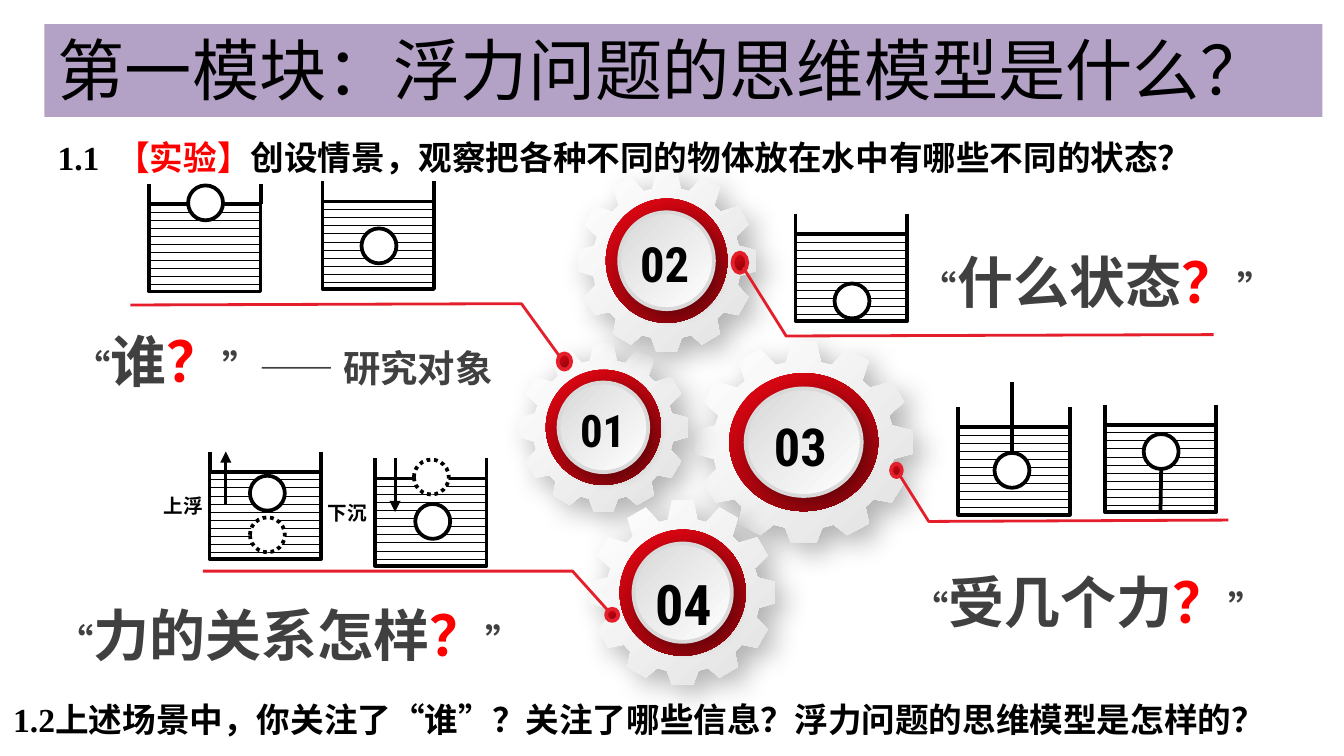
import math

from lxml import etree
from pptx import Presentation
from pptx import util as u
from pptx.dml.color import RGBColor
from pptx.enum import dml, shapes, text
from pptx.oxml.ns import qn

BLACK = RGBColor(0x00, 0x00, 0x00)
WHITE = RGBColor(0xFF, 0xFF, 0xFF)
SILVER = RGBColor(0xE2, 0xE2, 0xE2)
GREY = RGBColor(0xD9, 0xD9, 0xD9)
DARK = RGBColor(0x40, 0x40, 0x40)
RED = RGBColor(0xFF, 0x00, 0x00)
CRIMSON = RGBColor(0xE3, 0x06, 0x13)
MAROON = RGBColor(0x81, 0x04, 0x0B)
POINTER = RGBColor(0xE4, 0x1F, 0x2B)
PURPLE = RGBColor(0xB3, 0xA1, 0xC6)

SERIF, QUOTE, LABEL = "Times New Roman", "Quicksand", "Roboto Condensed"
CJK, TITLE = "Noto Sans CJK SC", "Noto Sans CJK JP"
EAST_ASIAN = {SERIF: CJK, LABEL: CJK, CJK: CJK, TITLE: TITLE}
OVAL, RECT = shapes.MSO_SHAPE.OVAL, shapes.MSO_SHAPE.RECTANGLE
JUSTIFY, CENTER = text.PP_ALIGN.JUSTIFY, text.PP_ALIGN.CENTER

TANK_W, TANK_H, WALL, BALL = 0.83, 0.65, 0.15, 0.26


class Board:
    def __init__(self, slide):
        self.s = slide

    def outline(self, sp, color=None, width=2, dashed=False):
        if color is None:
            sp.line.fill.background()
            return
        sp.line.color.rgb = color
        sp.line.width = u.Pt(width)
        if dashed:
            sp.line.dash_style = dml.MSO_LINE.ROUND_DOT

    def gradient(self, sp, first, last, angle):
        sp.fill.gradient()
        sp.fill.gradient_angle = 360 - angle
        for stop, color in zip(sp.fill.gradient_stops, (first, last)):
            stop.color.rgb = color

    def cast_shadow(self, sp, blur, dist):
        effects = sp._element.spPr.find(qn("a:effectLst"))
        shadow = etree.SubElement(
            effects, qn("a:outerShdw"), blurRad=str(u.Pt(blur)),
            dist=str(u.Pt(dist)), dir="2700000", algn="tl", rotWithShape="0")
        color = etree.SubElement(shadow, qn("a:srgbClr"), val="000000")
        etree.SubElement(color, qn("a:alpha"), val="30000")

    def shape(self, kind, x, y, w, h):
        sp = self.s.shapes.add_shape(kind, *map(u.Inches, (x, y, w, h)))
        sp.shadow.inherit = False
        return sp

    def freeform(self, points, close):
        pts = [(u.Inches(x), u.Inches(y)) for x, y in points]
        fb = self.s.shapes.build_freeform(*pts[0])
        fb.add_line_segments(pts[1:], close=close)
        sp = fb.convert_to_shape()
        sp.shadow.inherit = False
        return sp

    def line(self, x1, y1, x2, y2, width=2, arrow=None):
        """Draw a straight line; arrow is None, "headEnd" or "tailEnd"."""
        c = self.s.shapes.add_connector(
            shapes.MSO_CONNECTOR.STRAIGHT, *map(u.Inches, (x1, y1, x2, y2)))
        self.outline(c, BLACK, width)
        spPr = c._element.spPr
        if arrow:
            etree.SubElement(spPr.find(qn("a:ln")), qn("a:" + arrow), type="triangle")
        etree.SubElement(spPr, qn("a:effectLst"))
        return c

    def runs(self, p, runs):
        for words, size, font, color, bold in runs:
            r = p.add_run()
            r.text = words
            r.font.size = u.Pt(size)
            r.font.name = font
            r.font.bold = bold
            r.font.color.rgb = color
            if font in EAST_ASIAN:
                r.font._element.find(qn("a:latin")).addnext(
                    etree.Element(qn("a:ea"), typeface=EAST_ASIAN[font]))

    def text(self, x, y, w, h, runs, align=None, grow=True):
        tf = self.s.shapes.add_textbox(*map(u.Inches, (x, y, w, h))).text_frame
        tf.word_wrap = grow
        if grow:
            tf.auto_size = text.MSO_AUTO_SIZE.SHAPE_TO_FIT_TEXT
        p = tf.paragraphs[0]
        p.alignment = align
        self.runs(p, runs)
        return p

    def title(self, x, y, w, h, words):
        sp = self.s.shapes.title
        sp.left, sp.top, sp.width, sp.height = map(u.Inches, (x, y, w, h))
        tf = sp.text_frame
        tf.auto_size = text.MSO_AUTO_SIZE.NONE
        tf.vertical_anchor = text.MSO_ANCHOR.MIDDLE
        tf.paragraphs[0].alignment = JUSTIFY
        self.runs(tf.paragraphs[0], [(words, 36, TITLE, BLACK, False)])
        self.s.shapes._spTree.append(sp._element)  # in front of its band

    def gear(self, cx, cy, w, h, label, size, label_box):
        """Twelve-toothed wheel with a red ring and a numbered hub."""
        points = []
        for tooth in range(12):
            for offset, tip in ((-11.5, False), (-6.6, True), (6.6, True), (11.5, False)):
                a = math.radians(30 * tooth + offset - 90)
                radius = 1 if tip else 0.83 + 0.03 * math.sin(a)
                points.append((cx + w / 2 * radius * math.cos(a),
                               cy + h / 2 * radius * math.sin(a)))
        wheel = self.freeform(points, close=True)
        self.gradient(wheel, WHITE, SILVER, 45)
        self.outline(wheel)
        self.cast_shadow(wheel, 15, 7)
        ring, hub = [self.shape(OVAL, cx - w * k / 2, cy - h * k / 2, w * k, h * k)
                     for k in (0.68, 0.53)]
        self.gradient(ring, CRIMSON, MAROON, 60)
        self.outline(ring)
        self.gradient(hub, GREY, WHITE, 45)
        self.outline(hub, GREY)
        self.cast_shadow(hub, 7, 3)
        self.text(*label_box, [(label, size, LABEL, BLACK, True)], CENTER)

    def pointer(self, dot_box, points):
        dot = self.shape(OVAL, *dot_box)
        self.gradient(dot, CRIMSON, MAROON, 60)
        self.outline(dot, POINTER)
        sp = self.freeform(points, close=False)
        sp.fill.background()
        self.outline(sp, POINTER, 1.5)

    def tank(self, x, y):
        """Open vessel; x, y is the left end of the water surface."""
        water = self.shape(RECT, x, y, TANK_W, TANK_H)
        water.fill.patterned()
        water.fill.pattern = dml.MSO_PATTERN.DASHED_HORIZONTAL
        water.fill.fore_color.rgb = BLACK
        water.fill.back_color.rgb = WHITE
        self.outline(water, BLACK)
        for side in (x, x + TANK_W):
            self.line(side, y - WALL, side, y)
        return water

    def ball(self, x, y, dashed=False):
        sp = self.shape(OVAL, x, y, BALL, BALL)
        sp.fill.solid()
        sp.fill.fore_color.rgb = WHITE
        self.outline(sp, BLACK, dashed=dashed)
        return sp

    def question(self, x, y, w, words, tail="”"):
        self.text(x, y, w, 0.61, [
            ("“", 20, QUOTE, DARK, True), (words, 30, CJK, DARK, True),
            ("？", 30, CJK, RED, True), (tail, 20, QUOTE, DARK, True)], CENTER)


def main():
    prs = Presentation()
    prs.slide_width = u.Inches(10)
    prs.slide_height = prs.slide_width * 9 // 16
    b = Board(prs.slides.add_slide(prs.slide_layouts[5]))

    b.gear(5.98, 3.29, 1.63, 1.51, "03", 28, (5.6, 3.03, 0.71, 0.57))
    b.gear(4.49, 3.18, 1.26, 1.26, "01", 24, (4.11, 2.95, 0.75, 0.5))
    b.gear(4.96, 1.94, 1.33, 1.36, "02", 26, (4.49, 1.69, 0.91, 0.54))
    b.gear(5.08, 4.41, 1.38, 1.38, "04", 30, (4.71, 4.19, 0.75, 0.61))

    b.pointer((5.45, 1.88, 0.11, 0.15), [(5.53, 1.99), (5.85, 2.5), (9.03, 2.49)])
    b.pointer((6.63, 3.45, 0.08, 0.1), [(6.69, 3.53), (6.91, 3.88), (9.14, 3.87)])
    b.pointer((4.15, 2.63, 0.1, 0.12), [(4.17, 2.66), (3.88, 2.26), (0.97, 2.27)])
    b.pointer((4.51, 4.53, 0.09, 0.09), [(4.53, 4.55), (4.26, 4.25), (1.51, 4.25)])

    band = b.shape(RECT, 0.33, 0.18, 9.51, 0.69)
    band.fill.solid()
    band.fill.fore_color.rgb = PURPLE
    b.outline(band)
    b.title(0.33, 0.28, 9.51, 0.46, "第一模块：浮力问题的思维模型是什么？")

    p = b.text(0.33, 0.99, 9.45, 0.38, [
        ("1.1  ", 18, SERIF, BLACK, True), ("【实验】", 18, SERIF, RED, True),
        ("创设情景，观察把各种不同的物体放在水中有哪些不同的状态？", 18, SERIF, BLACK, True)],
        JUSTIFY)
    p.line_spacing = u.Pt(20)
    p.space_before = p.space_after = u.Pt(2.4)

    # Floating, suspended and sunken balls
    for tank, ball in (((1.11, 1.52), (1.4, 1.38)), ((2.4, 1.5), (2.69, 1.7)),
                       ((5.92, 1.74), (6.21, 2.11))):
        b.tank(*tank)
        b.ball(*ball)

    # Ball hung from above, ball tied to the bottom
    b.tank(7.13, 3.18)
    hung = b.ball(7.4, 3.37)
    b.line(7.53, 3.37, 7.53, 2.84).begin_connect(hung, 0)
    water = b.tank(8.22, 3.16)
    b.ball(8.51, 3.23)
    b.line(8.64, 3.81, 8.64, 3.49).begin_connect(water, 2)

    # Rising and sinking balls
    for tank, ball, ghost, words, label, arrow_x, end in (
            ((1.56, 3.51), (1.86, 3.54), (1.86, 3.85), "上浮", (1.12, 3.63), 1.68, "headEnd"),
            ((2.79, 3.56), (3.09, 3.75), (3.08, 3.42), "下沉", (2.34, 3.68), 2.94, "tailEnd")):
        b.tank(*tank)
        b.ball(*ghost, dashed=True)
        b.ball(*ball)
        b.text(*label, 0.49, 0.33, [(words, 10.5, SERIF, BLACK, True)], JUSTIFY, grow=False)
        top = tank[1] - WALL
        b.line(arrow_x, top, arrow_x, top + 0.4, 1.5, end)

    b.text(0, 5.15, 9.99, 0.4, [
        ("1.2上述场景中，你关注了“谁”？关注了哪些信息？浮力问题的思维模型是怎样的？",
         18, SERIF, BLACK, True)])
    b.question(0.33, 2.38, 3.55, "谁", "”—— 研究对象")
    b.question(6.68, 1.79, 2.97, "什么状态")
    b.question(6.55, 4.17, 3.1, "受几个力")
    b.question(0.06, 4.42, 4.19, "力的关系怎样")

    prs.save("out.pptx")


if __name__ == "__main__":
    main()
